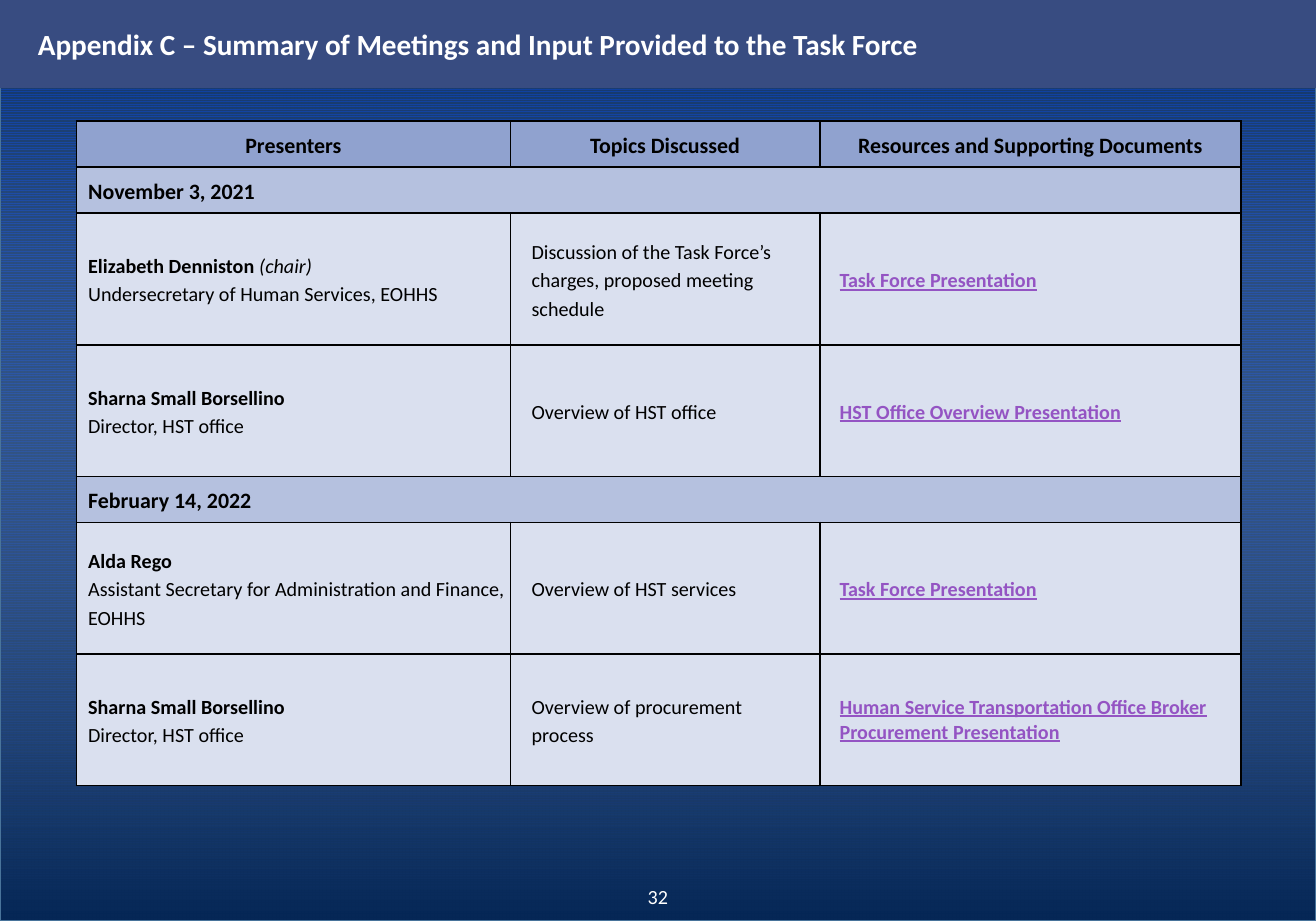
from lxml import etree
from pptx import Presentation, util as u
from pptx.dml.color import RGBColor
from pptx.enum import dml, shapes, text
from pptx.oxml import ns

# Content
TITLE = "Appendix C – Summary of Meetings and Input Provided to the Task Force"
PAGE = "32"
HEADERS = ("Presenters", "Topics Discussed", "Resources and Supporting Documents")
# Per meeting date: (name, role note, position, topic, document)
MEETINGS = [
    ("November 3, 2021", [
        ("Elizabeth Denniston ", "(chair)", "Undersecretary of Human Services, EOHHS",
         "Discussion of the Task Force’s charges, proposed meeting schedule",
         "Task Force Presentation"),
        ("Sharna Small Borsellino", "", "Director, HST office",
         "Overview of HST office", "HST Office Overview Presentation"),
    ]),
    ("February 14, 2022", [
        ("Alda Rego", "", "Assistant Secretary for Administration and Finance, EOHHS",
         "Overview of HST services", "Task Force Presentation"),
        ("Sharna Small Borsellino", "", "Director, HST office",
         "Overview of procurement\nprocess",
         "Human Service Transportation Office Broker Procurement Presentation"),
    ]),
]

# Format
BLACK, WHITE = RGBColor(0, 0, 0), RGBColor(0xFF, 0xFF, 0xFF)
STRIPE, NAVY = RGBColor(0x00, 0x33, 0x99), RGBColor(0x07, 0x2C, 0x62)
DEEP, PALE = RGBColor(0x06, 0x27, 0x56), RGBColor(0xB6, 0xD1, 0xFA)
EDGE, BAR = RGBColor(0x49, 0x74, 0x9B), RGBColor(0x38, 0x4C, 0x81)
HEAD_FILL, DATE_FILL = RGBColor(0x90, 0xA2, 0xCF), RGBColor(0xB5, 0xC1, 0xDF)
BODY_FILL, LINK = RGBColor(0xDA, 0xE0, 0xEF), RGBColor(0x94, 0x54, 0xC3)
W, H = 10, 7
COLS = (3.3, 2.35, 3.2)
LEFT, TOP, SHORT, TALL = 0.58, 0.92, 0.35, 1
INDENTS = (0.06, 0.13, 0.12)
BODY = {"size": u.Pt(11)}
HEADING = {"size": u.Pt(12), "bold": True}
LINKED = {**BODY, "bold": True, "underline": True, "color": LINK}


def add_paragraph(tf, runs, first=True, indent=0, **layout):
    p = tf.paragraphs[0] if first else tf.add_paragraph()
    pPr = p._p.get_or_add_pPr()
    pPr.set("marL", str(u.Inches(indent)))
    pPr.set("indent", "0")
    for key, value in layout.items():
        setattr(p, key, value)
    for words, style in runs:
        for i, line in enumerate(words.split("\n")):
            if i:
                p.add_line_break()
            r = p.add_run()
            r.text = line
            font = {"name": "Calibri", "bold": False, "color": BLACK, **style}
            r.font.color.rgb = font.pop("color")
            for key, value in font.items():
                setattr(r.font, key, value)


def fill_cell(cell, fill, paragraphs, **layout):
    margins = {"margin_left": 0.03, "margin_right": 0.03,
               "margin_top": 0.01, "margin_bottom": 0.01}
    for key, value in margins.items():
        setattr(cell, key, u.Inches(value))
    cell.vertical_anchor = text.MSO_ANCHOR.MIDDLE
    cell.fill.solid()
    cell.fill.fore_color.rgb = fill
    tcPr = cell._tc.get_or_add_tcPr()
    for i, side in enumerate(("lnL", "lnR", "lnT", "lnB")):
        ln = etree.Element(ns.qn("a:" + side), w=str(u.Pt(1)))
        solid = etree.SubElement(ln, ns.qn("a:solidFill"))
        etree.SubElement(solid, ns.qn("a:srgbClr"), val=str(BLACK))
        tcPr.insert(i, ln)
    for i, runs in enumerate(paragraphs):
        add_paragraph(cell.text_frame, runs, i == 0, **layout)


def add_rect(s, height):
    sp = s.shapes.add_shape(shapes.MSO_SHAPE.RECTANGLE, 0, 0,
                            u.Inches(W), u.Inches(height))
    sp.shadow.inherit = False
    return sp


prs = Presentation()
prs.slide_width, prs.slide_height = u.Inches(W), u.Inches(H)
s = prs.slides.add_slide(prs.slide_layouts[6])

# Striped background under a fading veil
bg = s.background.fill
bg.patterned()
bg.pattern = dml.MSO_PATTERN.LIGHT_HORIZONTAL
bg.fore_color.rgb, bg.back_color.rgb = STRIPE, NAVY
veil = add_rect(s, H)
veil.line.color.rgb, veil.line.width = EDGE, u.Pt(1.5)
veil.fill.gradient()
veil.fill.gradient_angle = 90
for stop, color, position in zip(veil.fill.gradient_stops, (DEEP, PALE), (0, 1)):
    stop.color.rgb, stop.position = color, position
clear = veil._element.spPr.findall(".//" + ns.qn("a:gs"))[-1][0]
etree.SubElement(clear, ns.qn("a:alpha"), val="0")

# Meetings table
heights = [SHORT]
for _, talks in MEETINGS:
    heights += [SHORT] + [TALL] * len(talks)
table = s.shapes.add_table(len(heights), len(COLS), u.Inches(LEFT), u.Inches(TOP),
                           u.Inches(sum(COLS)), u.Inches(sum(heights))).table
for col, width in zip(table.columns, COLS):
    col.width = u.Inches(width)
for row, height in zip(table.rows, heights):
    row.height = u.Inches(height)
for c, words in enumerate(HEADERS):
    fill_cell(table.cell(0, c), HEAD_FILL, [[(words, HEADING)]],
              alignment=text.PP_ALIGN.CENTER, line_spacing=1.15)
row = 1
for date, talks in MEETINGS:
    table.cell(row, 0).merge(table.cell(row, len(COLS) - 1))
    fill_cell(table.cell(row, 0), DATE_FILL, [[(date, HEADING)]],
              indent=INDENTS[0], line_spacing=1.15)
    for row, (name, note, position, topic, document) in enumerate(talks, row + 1):
        presenter = [(name, {**BODY, "bold": True})]
        if note:
            presenter.append((note, {**BODY, "italic": True}))
        cells = ([presenter, [(position, BODY)]], [[(topic, BODY)]],
                 [[(document, LINKED)]])
        for c, paragraphs in enumerate(cells):
            wraps = c == 2 and len(document) > 40
            spacing = {"space_after": u.Pt(2)} if wraps else {"line_spacing": 1.15}
            fill_cell(table.cell(row, c), BODY_FILL, paragraphs,
                      indent=INDENTS[c], **spacing)
    row += 1

# Title bar
bar = add_rect(s, 0.67)
bar.fill.solid()
bar.fill.fore_color.rgb = BAR
bar.line.fill.background()
bar.text_frame.vertical_anchor = text.MSO_ANCHOR.MIDDLE
add_paragraph(bar.text_frame, [(TITLE, {"size": u.Pt(16), "bold": True, "color": WHITE})],
              indent=0.19, alignment=text.PP_ALIGN.LEFT)

# Page number
box = s.shapes.add_textbox(u.Inches(W * 5 / 12), u.Inches(H - 0.33),
                           u.Inches(W / 6), u.Inches(0.33))
box.text_frame.word_wrap = True
add_paragraph(box.text_frame, [(PAGE, {**BODY, "color": WHITE})],
              alignment=text.PP_ALIGN.CENTER)

prs.save("out.pptx")
